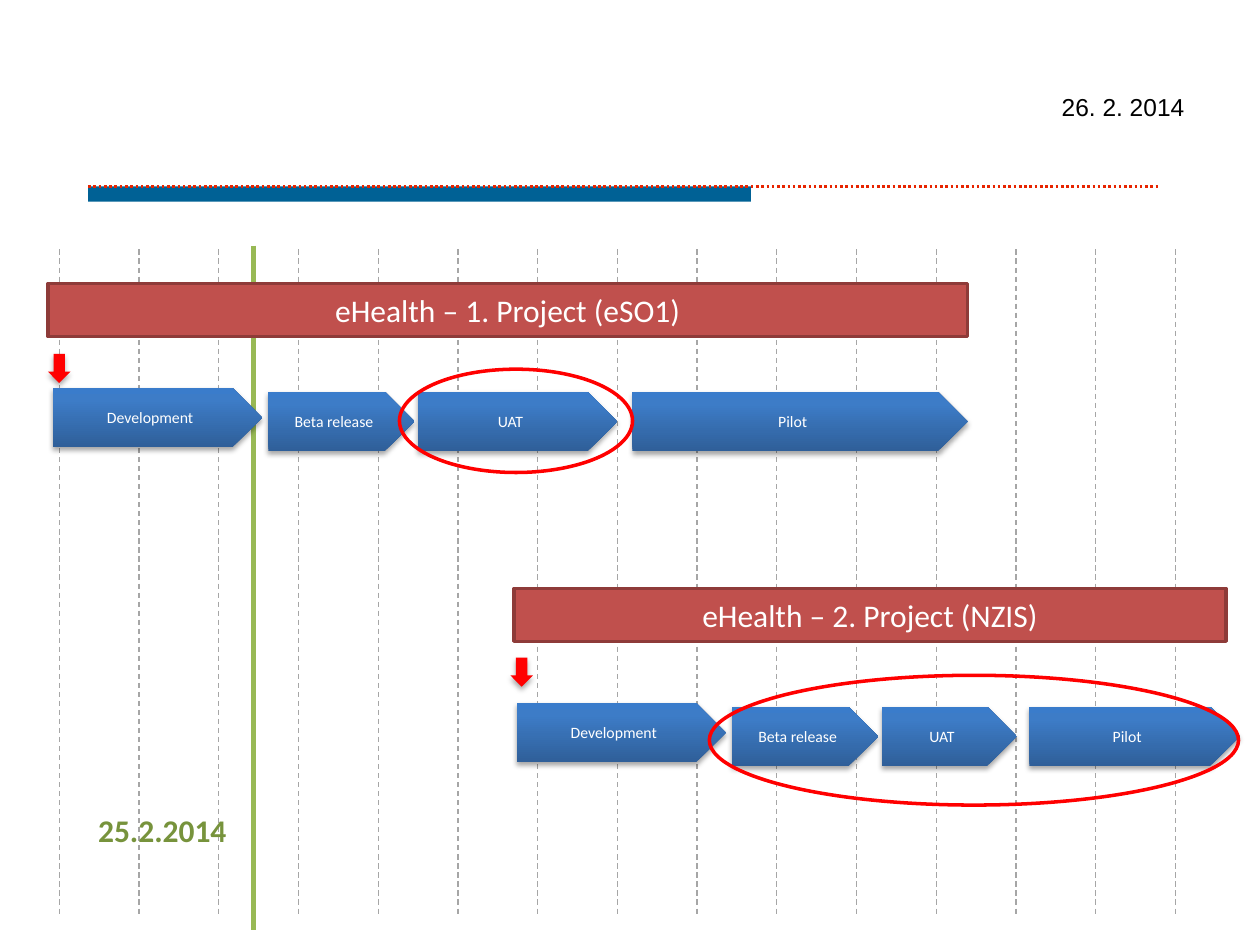
from copy import deepcopy

from lxml.etree import SubElement
from pptx import Presentation
from pptx.dml.color import RGBColor
from pptx.enum.dml import MSO_LINE
from pptx.enum.shapes import MSO_CONNECTOR, MSO_SHAPE
from pptx.enum.text import MSO_ANCHOR, PP_ALIGN
from pptx.oxml.ns import qn
from pptx.util import Inches, Pt

COLORS = {
    "black": "000000", "white": "FFFFFF", "bar": "006195", "dots": "E72400",
    "today": "98B955", "today_text": "77933C", "grid": "A6A6A6", "red": "FF0000",
    "project": "C0504D", "project_line": "8E3B39",
}
PHASE_STOPS = [(0, "2F5F99"), (0.8, "3D7CC7"), (1, "3A7CCB")]


def add_line(x1, y1, x2, y2, color, width, dash=None):
    line = s.shapes.add_connector(MSO_CONNECTOR.STRAIGHT, Inches(x1), Inches(y1), Inches(x2), Inches(y2))
    line.line.color.rgb = RGBColor.from_string(COLORS[color])
    line.line.width = Pt(width)
    if dash:
        line.line.dash_style = dash
    SubElement(line._element.spPr, qn("a:effectLst"))


def add_shape(kind, x, y, w, h, fill=None, line=None, text="", size=9, shadow=False):
    sp = s.shapes.add_shape(kind, Inches(x), Inches(y), Inches(w), Inches(h))
    sp.shadow.inherit = False
    if fill == "phase":
        sp.fill.gradient()
        sp.fill.gradient_angle = 90
        stops = sp._element.spPr.find(".//" + qn("a:gsLst"))
        stops.append(deepcopy(stops[0]))
        for stop, (position, color) in zip(sp.fill.gradient_stops, PHASE_STOPS):
            stop.position = position
            stop.color.rgb = RGBColor.from_string(color)
    elif fill:
        sp.fill.solid()
        sp.fill.fore_color.rgb = RGBColor.from_string(COLORS[fill])
    else:
        sp.fill.background()
    if line:
        sp.line.color.rgb = RGBColor.from_string(COLORS[line])
        sp.line.width = Pt(2)
    else:
        sp.line.fill.background()
    if shadow:
        effects = sp._element.spPr.find(qn("a:effectLst"))
        outer = SubElement(effects, qn("a:outerShdw"), blurRad=str(Pt(3.1)), dist=str(Pt(1.8)),
                           dir="5400000", rotWithShape="0")
        color = SubElement(outer, qn("a:srgbClr"), val=COLORS["black"])
        SubElement(color, qn("a:alpha"), val="35000")
    if text:
        tf = sp.text_frame
        tf.vertical_anchor = MSO_ANCHOR.MIDDLE
        p = tf.paragraphs[0]
        p.text = text
        p.alignment = PP_ALIGN.CENTER
        p.font.name = "Calibri"
        p.font.size = Pt(size)
        p.font.color.rgb = RGBColor.from_string(COLORS["white"])


prs = Presentation()
prs.slide_width = Inches(10)
prs.slide_height = Inches(7.5)
s = prs.slides.add_slide(prs.slide_layouts[6])

date = s.shapes.add_textbox(Inches(0.5), Inches(0.3), Inches(9), Inches(1.09))
tf = date.text_frame
tf.word_wrap = True
tf.vertical_anchor = MSO_ANCHOR.MIDDLE
p = tf.paragraphs[0]
p.text = "26. 2. 2014"
p.alignment = PP_ALIGN.RIGHT
p.font.name = "Arial"
p.font.size = Pt(14)
p.font.color.rgb = RGBColor.from_string(COLORS["black"])

add_shape(MSO_SHAPE.RECTANGLE, 0.7, 1.48, 5.26, 0.12, "bar")
add_line(0.7, 1.48, 9.2, 1.48, "dots", 1.5, MSO_LINE.ROUND_DOT)

add_line(2.01, 1.95, 2.01, 7.38, "today", 3)
grid_left, grid_right, grid_count = 0.47, 9.33, 15
for i in range(grid_count):
    x = grid_left + i * (grid_right - grid_left) / (grid_count - 1)
    add_line(x, 1.98, x, 7.27, "grid", 0.75, MSO_LINE.DASH)

projects = [
    ("eHealth – 1. Project (eSO1)", 0.38, 2.25, 7.3, (0.38, 2.81), 3.08,
     [("Development", 0.42, 1.66), ("Beta release", 2.13, 1.16), ("UAT", 3.32, 1.58), ("Pilot", 5.02, 2.66)]),
    ("eHealth – 2. Project (NZIS)", 4.08, 4.67, 5.65, (4.05, 5.22), 5.58,
     [("Development", 4.1, 1.66), ("Beta release", 5.81, 1.16), ("UAT", 7, 1.07), ("Pilot", 8.17, 1.67)]),
]
for title, left, top, width, (arrow_x, arrow_y), phase_top, phases in projects:
    add_shape(MSO_SHAPE.DOWN_ARROW, arrow_x, arrow_y, 0.18, 0.23, "red", shadow=True)
    for i, (name, x, w) in enumerate(phases):
        y = phase_top + (0.03 if i else 0)
        add_shape(MSO_SHAPE.PENTAGON, x, y, w, 0.47, "phase", text=name, shadow=True)
    add_shape(MSO_SHAPE.RECTANGLE, left, top, width, 0.42, "project", "project_line", title, 18)

today = s.shapes.add_textbox(Inches(0.68), Inches(6.39), Inches(1.32), Inches(0.4))
today.text_frame.word_wrap = False
p = today.text_frame.paragraphs[0]
p.text = "25.2.2014"
p.font.name = "Calibri"
p.font.size = Pt(18)
p.font.bold = True
p.font.color.rgb = RGBColor.from_string(COLORS["today_text"])

for x, y, w, h in [(3.17, 2.93, 1.85, 0.82), (5.63, 5.36, 4.2, 1.03)]:
    add_shape(MSO_SHAPE.OVAL, x, y, w, h, line="red")

prs.save("out.pptx")
